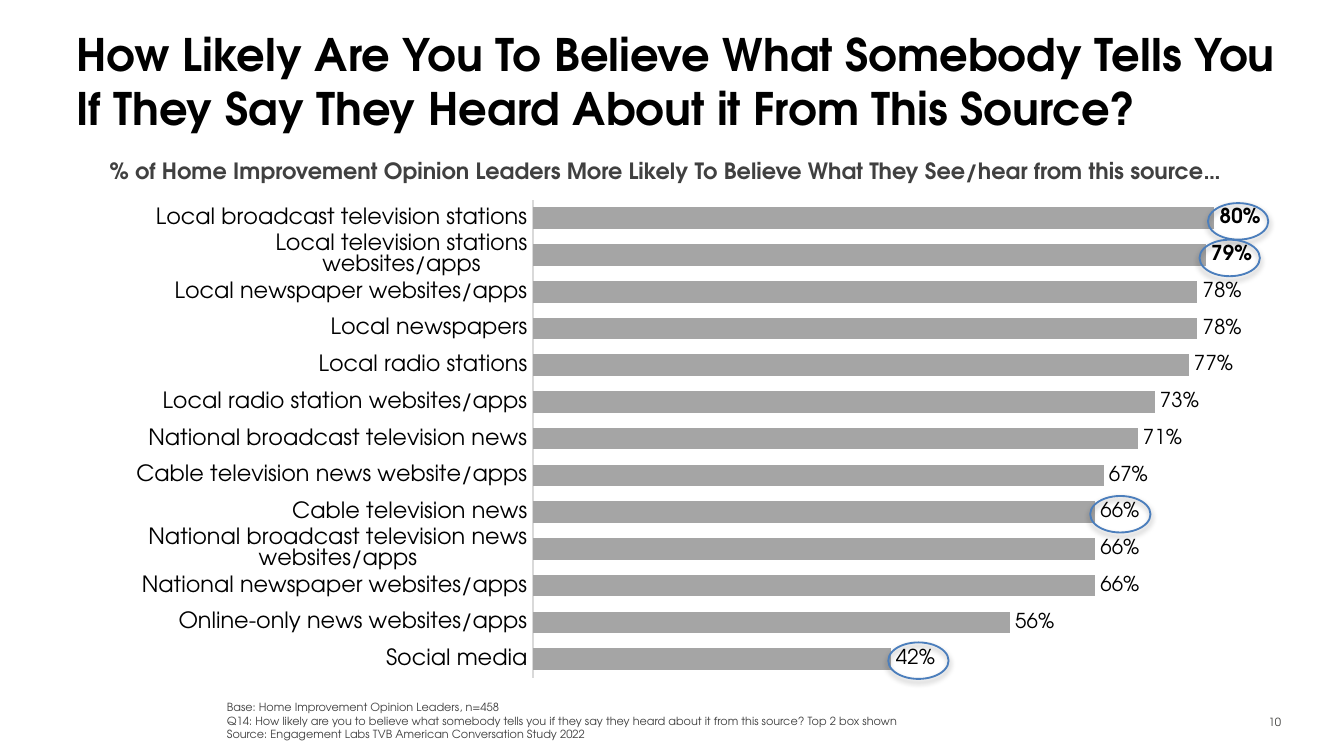
from dataclasses import dataclass

import lxml.etree
import pptx
import pptx.chart.data
import pptx.dml.color
import pptx.enum.chart
import pptx.enum.shapes
import pptx.enum.text
import pptx.oxml.ns
import pptx.util
from pptx.util import Cm, Pt

FONT = "TeX Gyre Adventor"
ALIGN = pptx.enum.text.PP_ALIGN
ANCHOR = pptx.enum.text.MSO_ANCHOR
FIRST_RING_TOP, ROW_PITCH = 3.84, 0.692
RING_LEFT_AT_ZERO, RING_CM_PER_UNIT = 10.11, 15.9


@dataclass
class NewsSource:
    name: str
    share: float
    ringed: bool = False
    bold: bool = False


@dataclass
class TextBlock:
    lines: str
    left: float
    top: float
    width: float
    height: float
    size: float
    color: str
    bold: bool = False
    align: ALIGN = ALIGN.LEFT
    anchor: ANCHOR = ANCHOR.TOP
    wrap: bool = True


NEWS_SOURCES = [
    NewsSource("Local broadcast television stations", 0.80, ringed=True, bold=True),
    NewsSource("Local television stations websites/apps", 0.79, ringed=True, bold=True),
    NewsSource("Local newspaper websites/apps", 0.78),
    NewsSource("Local newspapers", 0.78),
    NewsSource("Local radio stations", 0.77),
    NewsSource("Local radio station websites/apps", 0.73),
    NewsSource("National broadcast television news", 0.71),
    NewsSource("Cable television news website/apps", 0.67),
    NewsSource("Cable television news", 0.66, ringed=True),
    NewsSource("National broadcast television news websites/apps", 0.66),
    NewsSource("National newspaper websites/apps", 0.66),
    NewsSource("Online-only news websites/apps", 0.56),
    NewsSource("Social media", 0.42, ringed=True),
]

TEXT_BLOCKS = [
    TextBlock("How Likely Are You To Believe What Somebody Tells You "
              "If They Say They Heard About it From This Source?",
              1.19, 0.38, 23.39, 2.29, 24, "000000", bold=True),
    TextBlock("% of Home Improvement Opinion Leaders More Likely To Believe "
              "What They See/hear from this source…",
              1.65, 2.84, 21.87, 1.27, 12, "404040", bold=True,
              align=ALIGN.CENTER, wrap=False),
    TextBlock("Base: Home Improvement Opinion Leaders, n=458\n"
              "Q14: How likely are you to believe what somebody tells you if they say "
              "they heard about it from this source? Top 2 box shown\n"
              "Source: Engagement Labs TVB American Conversation Study 2022",
              4.04, 13.11, 20.57, 1.02, 6, "404040", anchor=ANCHOR.BOTTOM),
    TextBlock("10", 22.96, 13.26, 1.5, 0.76, 6, "3C3C3A",
              align=ALIGN.RIGHT, anchor=ANCHOR.MIDDLE),
]


def rgb(hex_color: str) -> pptx.dml.color.RGBColor:
    return pptx.dml.color.RGBColor.from_string(hex_color)


def style_font(font, size: float, color: str, bold: bool = False) -> None:
    font.name = FONT
    font.size = Pt(size)
    font.bold = bold
    font.color.rgb = rgb(color)


def add_text(slide, block: TextBlock) -> None:
    box = slide.shapes.add_textbox(
        Cm(block.left), Cm(block.top), Cm(block.width), Cm(block.height))
    frame = box.text_frame
    frame.word_wrap = block.wrap
    frame.vertical_anchor = block.anchor
    frame.text = block.lines
    for paragraph in frame.paragraphs:
        paragraph.alignment = block.align
        for run in paragraph.runs:
            style_font(run.font, block.size, block.color, block.bold)


def place_plot(chart, x: float, y: float, w: float, h: float) -> None:
    """Fix the inner plot area, as fractions of the chart."""
    qn = pptx.oxml.ns.qn
    plot_area = chart.plots[0]._element.getparent()
    for automatic in plot_area.findall(qn("c:layout")):
        plot_area.remove(automatic)
    layout = lxml.etree.Element(qn("c:layout"))
    manual = lxml.etree.SubElement(layout, qn("c:manualLayout"))
    settings = {"layoutTarget": "inner", "xMode": "edge", "yMode": "edge",
                "x": x, "y": y, "w": w, "h": h}
    for tag, value in settings.items():
        lxml.etree.SubElement(manual, qn(f"c:{tag}"), val=str(value))
    plot_area.insert(0, layout)


def add_belief_chart(slide, sources: list[NewsSource]) -> None:
    data = pptx.chart.data.CategoryChartData(number_format="0%")
    data.categories = [source.name for source in sources]
    data.add_series("Series 1", [source.share for source in sources])
    chart = slide.shapes.add_chart(
        pptx.enum.chart.XL_CHART_TYPE.BAR_CLUSTERED,
        Cm(2.49), Cm(3.43), Cm(22.43), Cm(9.73), data).chart
    chart.has_legend = False
    chart.has_title = False
    style_font(chart.font, 10, "000000")
    place_plot(chart, 0.338, 0.036, 0.646, 0.928)

    category_axis = chart.category_axis
    category_axis.reverse_order = True
    category_axis.major_tick_mark = pptx.enum.chart.XL_TICK_MARK.NONE
    category_axis.format.line.color.rgb = rgb("D9D9D9")
    category_axis.format.line.width = Pt(0.75)
    style_font(category_axis.tick_labels.font, 12, "000000")
    value_axis = chart.value_axis
    value_axis.minimum_scale = 0
    value_axis.maximum_scale = 0.9
    value_axis.has_major_gridlines = False
    value_axis.visible = False

    plot = chart.plots[0]
    plot.gap_width = 70
    plot.vary_by_categories = False
    shares = plot.series[0]
    shares.format.fill.solid()
    shares.format.fill.fore_color.rgb = rgb("A5A5A5")
    outside_end = pptx.enum.chart.XL_LABEL_POSITION.OUTSIDE_END
    labels = shares.data_labels
    labels.show_value = True
    labels.number_format = "0%"
    labels.number_format_is_linked = False
    labels.position = outside_end
    style_font(labels.font, 11, "000000")
    for row, source in enumerate(sources):
        if source.bold:
            label = shares.points[row].data_label
            style_font(label.font, 11, "000000", bold=True)
            label.position = outside_end


def add_ring(slide, row: int, share: float) -> None:
    """Circle the value label at the end of a bar."""
    ring = slide.shapes.add_shape(
        pptx.enum.shapes.MSO_SHAPE.OVAL,
        Cm(RING_LEFT_AT_ZERO + RING_CM_PER_UNIT * share),
        Cm(FIRST_RING_TOP + ROW_PITCH * row), Cm(1.14), Cm(0.69))
    ring.fill.background()
    ring.line.color.rgb = rgb("4B7EBC")
    ring.line.width = Pt(1)
    ring.shadow.inherit = False
    qn = pptx.oxml.ns.qn
    effects = ring._element.spPr.find(qn("a:effectLst"))
    shadow = lxml.etree.SubElement(
        effects, qn("a:outerShdw"), blurRad=str(Pt(3.1)), dist=str(Pt(1.8)),
        dir="5400000", rotWithShape="0")
    shade = lxml.etree.SubElement(shadow, qn("a:srgbClr"), val="000000")
    lxml.etree.SubElement(shade, qn("a:alpha"), val="35000")


def main() -> None:
    deck = pptx.Presentation()
    deck.slide_width, deck.slide_height = Cm(25.4), Cm(14.29)
    slide = deck.slides.add_slide(deck.slide_layouts[6])
    add_belief_chart(slide, NEWS_SOURCES)
    for block in TEXT_BLOCKS:
        add_text(slide, block)
    for row, source in enumerate(NEWS_SOURCES):
        if source.ringed:
            add_ring(slide, row, source.share)
    deck.save("out.pptx")


if __name__ == "__main__":
    main()
